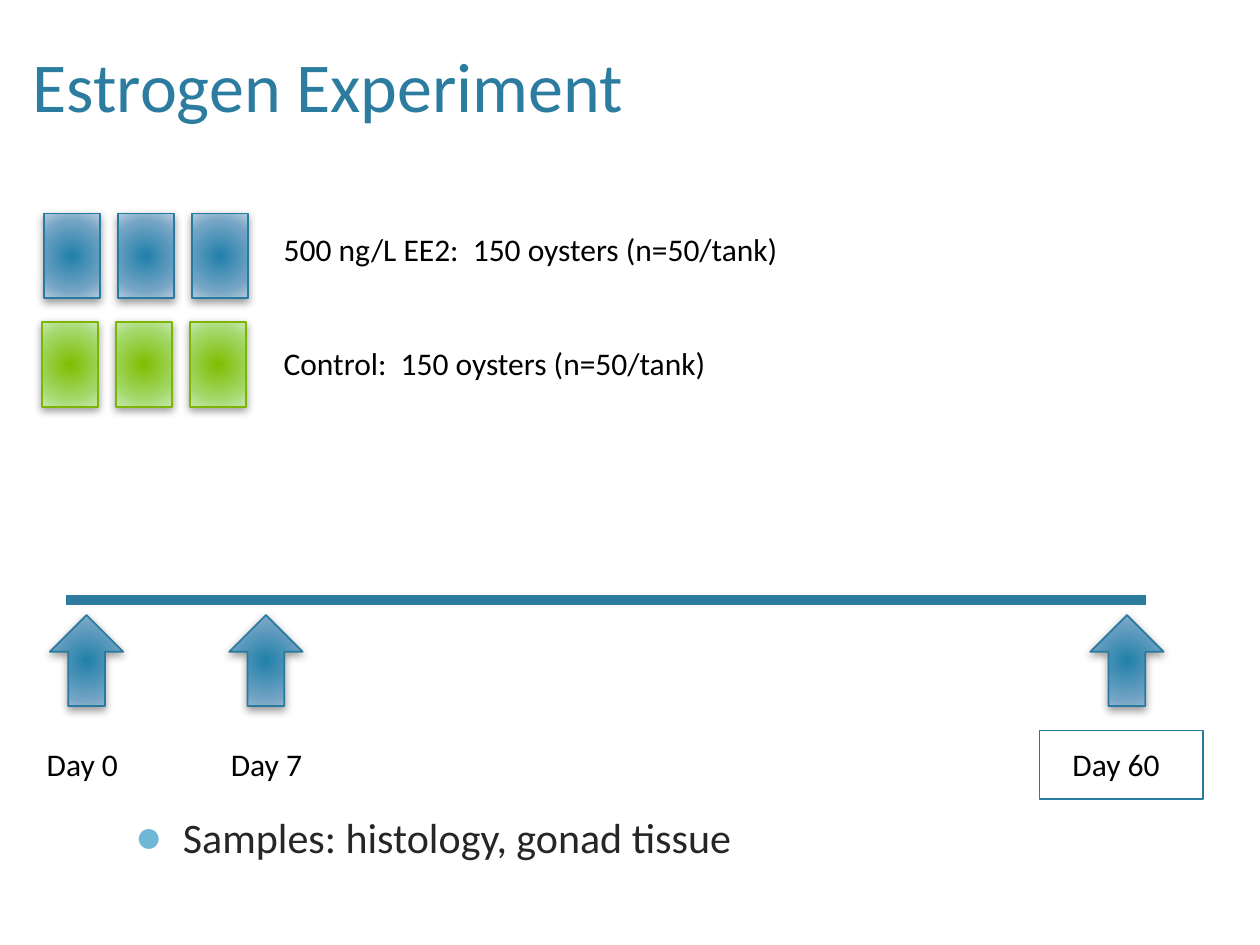
from dataclasses import dataclass

from lxml import etree
from pptx import Presentation
from pptx.dml.color import RGBColor
from pptx.enum.shapes import MSO_CONNECTOR, MSO_SHAPE
from pptx.enum.text import MSO_ANCHOR, MSO_AUTO_SIZE, PP_ALIGN
from pptx.oxml import parse_xml
from pptx.oxml.ns import nsdecls, qn
from pptx.util import Pt

RECTANGLE = MSO_SHAPE.RECTANGLE
UP_ARROW = MSO_SHAPE.UP_ARROW
STRAIGHT = MSO_CONNECTOR.STRAIGHT
TOP = MSO_ANCHOR.TOP
LEFT, CENTER = PP_ALIGN.LEFT, PP_ALIGN.CENTER
FIT_SHAPE, NO_FIT = MSO_AUTO_SIZE.SHAPE_TO_FIT_TEXT, MSO_AUTO_SIZE.NONE


@dataclass(frozen=True)
class Theme:
    """Colours, font and type sizes of the slide."""
    font: str = "Calibri"
    title: str = "2C7C9F"
    label: str = "000000"
    body: str = "262626"
    bullet: str = "6FB7D7"
    blue_line: str = "287A9E"
    green_line: str = "7DB602"
    blue_glow: tuple = ("2180AA", "75A5C5", "B8CCDC")
    green_glow: tuple = ("80BC00", "A3DA6D", "CBE7B4")
    title_size: int = 40
    body_size: int = 24
    label_size: int = 18


THEME = Theme()


def points(*lengths):
    """Turn numbers into lengths in points."""
    return [Pt(length) for length in lengths]


def write_text(box, text, size=THEME.label_size, color=THEME.label,
               align=LEFT, fit=FIT_SHAPE):
    """Put one formatted paragraph into a box and return the paragraph."""
    frame = box.text_frame
    frame.word_wrap = True
    frame.auto_size = fit
    frame.vertical_anchor = TOP
    paragraph = frame.paragraphs[0]
    paragraph.text = text
    paragraph.alignment = align
    font = paragraph.runs[0].font
    font.name = THEME.font
    font.size = Pt(size)
    font.color.rgb = RGBColor.from_string(color)
    return paragraph


def add_label(slide, text, place, **text_format):
    """Add a text box and return its paragraph."""
    return write_text(slide.shapes.add_textbox(*points(*place)), text, **text_format)


def add_title(slide, text, place):
    """Move the title placeholder and fill it."""
    title = slide.shapes.title
    title.left, title.top, title.width, title.height = points(*place)
    write_text(title, text, size=THEME.title_size, color=THEME.title, fit=NO_FIT)


def add_bullet(paragraph, indent):
    """Give a paragraph a round bullet with a hanging indent."""
    properties = paragraph._p.get_or_add_pPr()
    properties.set("marL", str(Pt(indent)))
    properties.set("indent", str(-Pt(indent)))
    color = etree.SubElement(properties, qn("a:buClr"))
    etree.SubElement(color, qn("a:srgbClr"), val=THEME.bullet)
    etree.SubElement(properties, qn("a:buSzPct"), val="110000")
    etree.SubElement(properties, qn("a:buFont"), typeface="Arial")
    etree.SubElement(properties, qn("a:buChar"), char="●")


def add_outline(slide, kind, place, line_color):
    """Add an unfilled preset shape with a thin line and no shadow."""
    shape = slide.shapes.add_shape(kind, *points(*place))
    shape.fill.background()
    shape.line.color.rgb = RGBColor.from_string(line_color)
    shape.line.width = Pt(1)
    shape.shadow.inherit = False
    return shape


def add_glowing(slide, kind, place, line_color, glow):
    """Add a preset shape with a radial gradient and a soft shadow."""
    shape = add_outline(slide, kind, place, line_color)
    properties = shape._element.spPr
    stops = "".join(
        f'<a:gs pos="{position}"><a:srgbClr val="{color}"/></a:gs>'
        for position, color in zip((0, 69000, 100000), glow))
    gradient = parse_xml(
        f'<a:gradFill {nsdecls("a")} rotWithShape="1"><a:gsLst>{stops}</a:gsLst>'
        '<a:path path="circle"><a:fillToRect l="100000" t="100000" r="100000"'
        ' b="100000"/></a:path></a:gradFill>')
    properties.replace(properties.find(qn("a:noFill")), gradient)
    properties.find(qn("a:effectLst")).append(parse_xml(
        f'<a:outerShdw {nsdecls("a")} blurRad="{Pt(5)}" dist="{Pt(2)}" dir="5400000"'
        ' rotWithShape="0"><a:srgbClr val="000000"><a:alpha val="40000"/>'
        '</a:srgbClr></a:outerShdw>'))


def add_tank_row(slide, left, top, line_color, glow):
    """Add the three tanks of one treatment."""
    for tank in range(3):
        add_glowing(slide, RECTANGLE, (left + 42.3 * tank, top, 32, 48.5),
                    line_color, glow)


def add_timeline(slide, start, end, y):
    """Add the thick line of the timeline."""
    timeline = slide.shapes.add_connector(STRAIGHT, *points(start, y, end, y))
    timeline.line.color.rgb = RGBColor.from_string(THEME.title)
    timeline.line.width = Pt(6)
    etree.SubElement(timeline._element.spPr, qn("a:effectLst"))


def main():
    """Build and save the slide."""
    deck = Presentation()
    deck.slide_width, deck.slide_height = points(720, 540)
    slide = deck.slides.add_slide(deck.slide_layouts[5])
    add_title(slide, "Estrogen Experiment", (11.5, 20.5, 708.5, 80))

    add_tank_row(slide, 25, 122, THEME.blue_line, THEME.blue_glow)
    add_tank_row(slide, 24, 184, THEME.green_line, THEME.green_glow)

    add_timeline(slide, 38, 655, 343)
    for arrow_left in (28.5, 131, 623):
        add_glowing(slide, UP_ARROW, (arrow_left, 351.5, 42, 52),
                    THEME.blue_line, THEME.blue_glow)
    for day, left, width in (("Day 0", 6, 82), ("Day 7", 101.5, 101.5),
                             ("Day 60", 580.5, 114.5)):
        add_label(slide, day, (left, 422, width, 29), align=CENTER)
    add_outline(slide, RECTANGLE, (594, 417.5, 93.5, 39), THEME.blue_line)

    add_label(slide, "500 ng/L EE2:  150 oysters (n=50/tank)", (155, 128, 398, 29))
    add_label(slide, "Control:  150 oysters (n=50/tank)", (155, 193, 307.5, 29))
    samples = add_label(slide, "Samples: histology, gonad tissue",
                        (70, 460, 526, 45), size=THEME.body_size,
                        color=THEME.body, fit=NO_FIT)
    add_bullet(samples, 27.5)

    deck.save("out.pptx")


if __name__ == "__main__":
    main()
